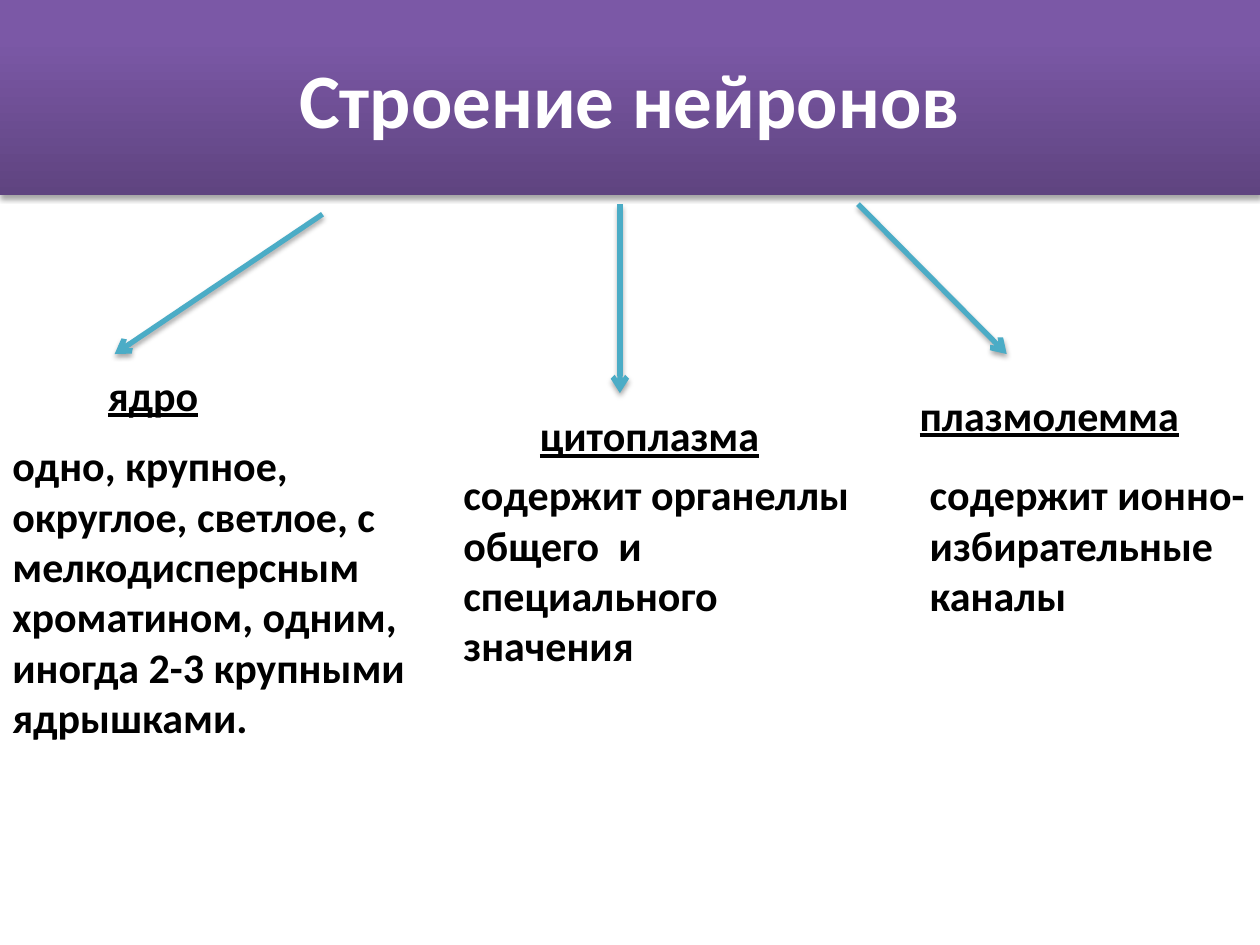
from pptx import Presentation
from pptx.dml.color import RGBColor
from pptx.enum.shapes import MSO_CONNECTOR
from pptx.enum.text import MSO_ANCHOR, MSO_AUTO_SIZE, PP_ALIGN
from pptx.oxml import parse_xml
from pptx.oxml.ns import nsdecls
from pptx.util import Inches, Pt

TITLE = "Строение нейронов"
TITLE_GRADIENT = [(0, "5F4480"), (80, "7B58A6"), (100, "7C57A8")]
ARROW_COLOR = "4BACC6"

BRANCHES = [
    {
        "arrow": (2.56, 1.7, 0.91, 2.81),
        "heading": ("ядро", 0.35, 2.88, 1.73, 0.5, PP_ALIGN.CENTER),
        "description": (
            "одно, крупное, округлое, светлое, с мелкодисперсным хроматином, "
            "одним, иногда 2-3 крупными ядрышками.",
            0, 3.44, 3.5, 2.83,
        ),
    },
    {
        "arrow": (4.92, 1.62, 4.92, 3.12),
        "heading": ("цитоплазма", 4.13, 3.2, 2.05, 0.5, PP_ALIGN.CENTER),
        "description": (
            "содержит органеллы общего  и специального значения",
            3.58, 3.67, 3.54, 1.72,
        ),
    },
    {
        "arrow": (6.81, 1.62, 7.99, 2.81),
        "heading": ("плазмолемма", 7.2, 3.04, 2.36, 0.5, PP_ALIGN.LEFT),
        "description": (
            "содержит ионно-избирательные каналы",
            7.28, 3.67, 2.72, 1.31,
        ),
    },
]


def color(value):
    return RGBColor.from_string(value)


def add_shadow(shape):
    shape._element.spPr.append(parse_xml(
        f'<a:effectLst {nsdecls("a")}>'
        f'<a:outerShdw blurRad="{Pt(3.1)}" dist="{Pt(1.8)}" dir="5400000" rotWithShape="0">'
        '<a:srgbClr val="000000"><a:alpha val="35000"/></a:srgbClr>'
        '</a:outerShdw></a:effectLst>'
    ))


def format_text(text_frame, size, font_color, alignment, underline=False):
    paragraph = text_frame.paragraphs[0]
    paragraph.alignment = alignment
    font = paragraph.runs[0].font
    font.name = "Calibri"
    font.size = Pt(size)
    font.bold = True
    font.underline = underline
    font.color.rgb = color(font_color)


def format_title(title):
    title.left, title.top = Inches(0), Inches(0)
    title.width, title.height = Inches(10), Inches(1.55)
    title.text_frame.text = TITLE
    title.text_frame.vertical_anchor = MSO_ANCHOR.MIDDLE
    format_text(title.text_frame, 44, "FFFFFF", PP_ALIGN.CENTER)
    stops = "".join(
        f'<a:gs pos="{position * 1000}"><a:srgbClr val="{value}"/></a:gs>'
        for position, value in TITLE_GRADIENT
    )
    title._element.spPr.append(parse_xml(
        f'<a:gradFill {nsdecls("a")} rotWithShape="1"><a:gsLst>{stops}</a:gsLst>'
        '<a:lin ang="16200000" scaled="0"/></a:gradFill>'
    ))
    add_shadow(title)


def add_arrow(slide, points):
    arrow = slide.shapes.add_connector(
        MSO_CONNECTOR.STRAIGHT, *[Inches(value) for value in points]
    )
    arrow.line.color.rgb = color(ARROW_COLOR)
    arrow.line.width = Pt(3)
    arrow.line._get_or_add_ln().append(
        parse_xml(f'<a:tailEnd {nsdecls("a")} type="arrow"/>')
    )
    add_shadow(arrow)


def add_text(slide, text, left, top, width, height, alignment=PP_ALIGN.LEFT, underline=False):
    box = slide.shapes.add_textbox(
        Inches(left), Inches(top), Inches(width), Inches(height)
    )
    text_frame = box.text_frame
    text_frame.word_wrap = True
    text_frame.auto_size = MSO_AUTO_SIZE.SHAPE_TO_FIT_TEXT
    text_frame.text = text
    format_text(text_frame, 24, "000000", alignment, underline)


def main():
    presentation = Presentation()
    presentation.slide_width = Inches(10)
    presentation.slide_height = Inches(7.5)
    slide = presentation.slides.add_slide(presentation.slide_layouts[5])
    format_title(slide.shapes.title)
    for branch in BRANCHES:
        add_arrow(slide, branch["arrow"])
        add_text(slide, *branch["heading"], underline=True)
    for branch in BRANCHES:
        add_text(slide, *branch["description"])
    presentation.save("out.pptx")


if __name__ == "__main__":
    main()
